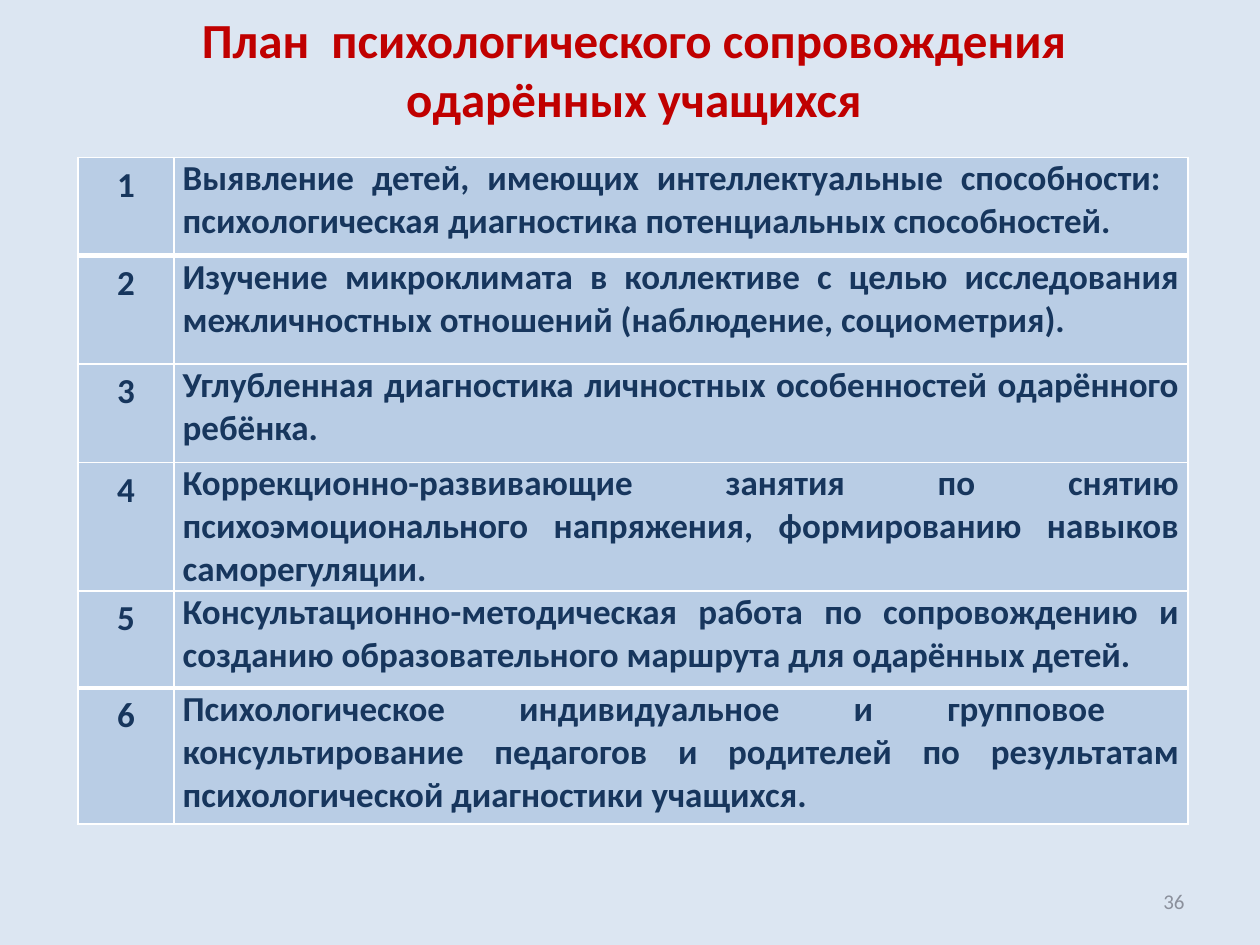
from lxml import etree
from pptx import Presentation
from pptx import util as u
from pptx.dml.color import RGBColor
from pptx.enum import text
from pptx.oxml import ns

COLORS = {"background": "DCE6F2", "title": "C00000", "cell": "B9CDE5",
          "cell_text": "17365D", "border": "FFFFFF", "number": "8B909C"}
TITLE = "План  психологического сопровождения одарённых учащихся"
STEPS = [
    (0.78, "Выявление детей, имеющих интеллектуальные способности:  психологическая диагностика потенциальных способностей."),
    (0.86, "Изучение микроклимата в коллективе с целью исследования межличностных отношений (наблюдение, социометрия)."),
    (0.78, "Углубленная диагностика личностных особенностей одарённого ребёнка."),
    (1, "Коррекционно-развивающие занятия по снятию психоэмоционального напряжения, формированию навыков саморегуляции."),
    (0.77, "Консультационно-методическая работа по сопровождению и созданию образовательного маршрута для одарённых детей."),
    (1.08, "Психологическое индивидуальное и групповое  консультирование педагогов и родителей по результатам психологической диагностики учащихся."),
]
COLUMNS = [0.76, 8.05]
RULES = [1, 3, 1, 1, 1, 3, 1]
CELL_FORMAT = {"margin_left": u.Inches(0.07), "margin_right": u.Inches(0.07),
               "margin_top": 0, "margin_bottom": 0}


def write(frame, content, color, size, bold, align, spacing=None):
    paragraph = frame.paragraphs[0]
    paragraph.alignment = align
    paragraph.line_spacing = spacing
    run = paragraph.add_run()
    run.text = content
    for name, value in {"name": "Calibri", "size": u.Pt(size), "bold": bold}.items():
        setattr(run.font, name, value)
    run.font.color.rgb = RGBColor.from_string(COLORS[color])


def add_border(cell, side, width):
    properties = cell._tc.get_or_add_tcPr()
    line = etree.SubElement(properties, ns.qn("a:ln" + side), w=str(u.Pt(width)))
    fill = etree.SubElement(line, ns.qn("a:solidFill"))
    etree.SubElement(fill, ns.qn("a:srgbClr"), val=COLORS["border"])


presentation = Presentation()
presentation.slide_width = u.Inches(10)
presentation.slide_height = u.Inches(7.5)
slide = presentation.slides.add_slide(presentation.slide_layouts[5])
slide.background.fill.solid()
slide.background.fill.fore_color.rgb = RGBColor.from_string(COLORS["background"])

title = slide.shapes.title
title_box = {"left": 0.72, "top": 0.15, "width": 8.62, "height": 1.42}
for name, value in title_box.items():
    setattr(title, name, u.Inches(value))
title_format = {"margin_top": 0, "margin_bottom": u.Inches(0.64), "word_wrap": True,
                "auto_size": text.MSO_AUTO_SIZE.NONE,
                "vertical_anchor": text.MSO_ANCHOR.MIDDLE}
for name, value in title_format.items():
    setattr(title.text_frame, name, value)
write(title.text_frame, TITLE, "title", 28, True, text.PP_ALIGN.CENTER)

table = slide.shapes.add_table(
    len(STEPS), len(COLUMNS), u.Inches(0.62), u.Inches(1.25),
    u.Inches(sum(COLUMNS)), u.Inches(sum(height for height, _ in STEPS))).table
for column, width in zip(table.columns, COLUMNS):
    column.width = u.Inches(width)
for index, (height, step) in enumerate(STEPS):
    table.rows[index].height = u.Inches(height)
    number_cell, step_cell = table.rows[index].cells
    for cell in (number_cell, step_cell):
        for name, value in CELL_FORMAT.items():
            setattr(cell, name, value)
        borders = {"L": 1, "R": 1, "T": RULES[index], "B": RULES[index + 1]}
        for side, width in borders.items():
            add_border(cell, side, width)
        cell.fill.solid()
        cell.fill.fore_color.rgb = RGBColor.from_string(COLORS["cell"])
    write(number_cell.text_frame, str(index + 1), "cell_text", 20, True,
          text.PP_ALIGN.CENTER, 1.15)
    write(step_cell.text_frame, step, "cell_text", 20, True, text.PP_ALIGN.JUSTIFY)

page_number = slide.shapes.add_textbox(
    u.Inches(7.17), u.Inches(6.95), u.Inches(2.33), u.Inches(0.4))
page_number.text_frame.word_wrap = True
page_number.text_frame.vertical_anchor = text.MSO_ANCHOR.MIDDLE
write(page_number.text_frame, "36", "number", 12, False, text.PP_ALIGN.RIGHT)

presentation.save("out.pptx")
